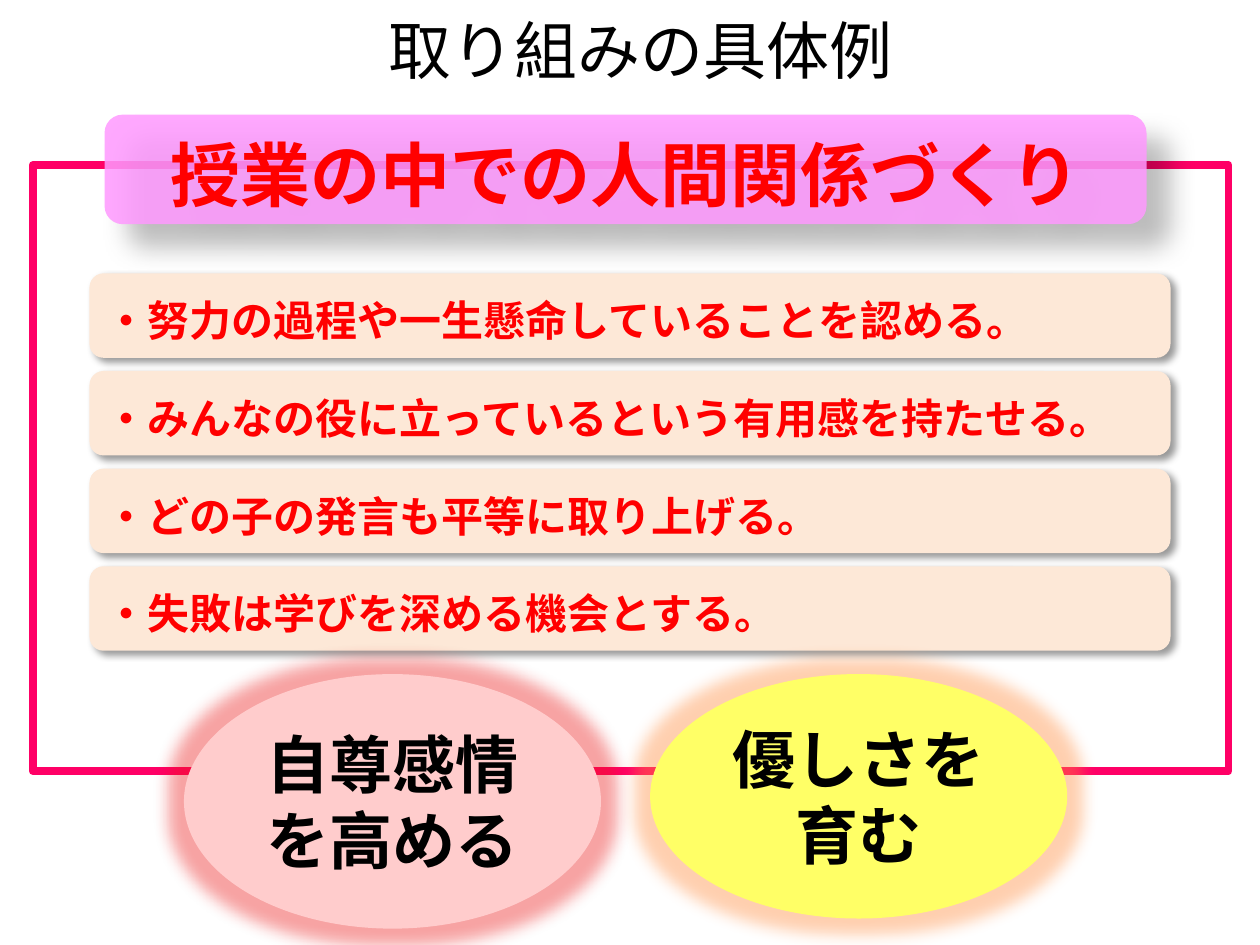
from lxml import etree
from pptx import Presentation
from pptx.dml.color import RGBColor
from pptx.enum.shapes import MSO_SHAPE
from pptx.enum.text import MSO_ANCHOR, PP_ALIGN
from pptx.oxml.ns import qn
from pptx.util import Inches, Pt

RECT, ROUNDED, OVAL = MSO_SHAPE.RECTANGLE, MSO_SHAPE.ROUNDED_RECTANGLE, MSO_SHAPE.OVAL
LEFT, CENTER, MIDDLE = PP_ALIGN.LEFT, PP_ALIGN.CENTER, MSO_ANCHOR.MIDDLE

# Content
TITLE = "取り組みの具体例"
BANNER = "授業の中での人間関係づくり"
PRACTICES = [
    "・努力の過程や一生懸命していることを認める。",
    "・みんなの役に立っているという有用感を持たせる。",
    "・どの子の発言も平等に取り上げる。",
    "・失敗は学びを深める機会とする。",
]
# text, left, height, fill, glow
GOALS = [
    ("自尊感情を高める", 1.46, 2.02, "pink", "red_glow"),
    ("優しさを育む", 5.16, 1.94, "yellow", "orange_glow"),
]
COLORS = {
    "frame": "FF0066", "banner": "FF99FF", "practice": "FDE8D7",
    "pink": "FFCCCC", "yellow": "FFFF66", "red": "FF0000",
    "black": "000000", "white": "FFFFFF",
    "red_glow": "EB1919", "orange_glow": "FF8939",
}
JAPANESE = "Noto Sans CJK JP"
PRACTICE_TOP, PRACTICE_STEP = 2.17, 0.775
ROUNDED_MARGINS = (0.1, 0.12, 0.1, 0.05)


def rgb(color):
    return RGBColor.from_string(COLORS[color])


def add_color(parent, color, alpha=100):
    node = etree.SubElement(parent, qn("a:srgbClr"), val=COLORS[color])
    if alpha < 100:
        etree.SubElement(node, qn("a:alpha"), val=str(alpha * 1000))


def write(shape, text, size, color="black", font=JAPANESE, bold=True,
          align=CENTER, margins=(0.1, 0.05, 0.1, 0.05), outline=None):
    frame = shape.text_frame
    frame.word_wrap = True
    frame.vertical_anchor = MIDDLE
    (frame.margin_left, frame.margin_top,
     frame.margin_right, frame.margin_bottom) = map(Inches, margins)
    paragraph = frame.paragraphs[0]
    paragraph.alignment = align
    run = paragraph.add_run()
    run.text = text
    run.font.size, run.font.bold, run.font.name = Pt(size), bold, font
    run.font.color.rgb = rgb(color)
    properties = run.font._element
    latin = properties.find(qn("a:latin"))
    latin.addnext(etree.Element(qn("a:ea"), typeface=font))
    if outline:
        line = etree.Element(qn("a:ln"), width_attribute(0.75))
        add_color(etree.SubElement(line, qn("a:solidFill")), outline)
        properties.insert(0, line)


def width_attribute(points):
    return {"w": str(Pt(points))}


def add_box(kind, left, top, width, height, fill=None, alpha=100):
    box = slide.shapes.add_shape(kind, *map(Inches, (left, top, width, height)))
    box.shadow.inherit = False
    box.line.fill.background()
    if fill:
        box.fill.solid()
        box.fill.fore_color.rgb = rgb(fill)
        if alpha < 100:
            node = box._element.spPr.find(qn("a:solidFill"))[0]
            etree.SubElement(node, qn("a:alpha"), val=str(alpha * 1000))
    else:
        box.fill.background()
    return box


def add_effect(box, tag, color, alpha, **attributes):
    effects = box._element.spPr.find(qn("a:effectLst"))
    effect = etree.SubElement(
        effects, qn(tag), {key: str(value) for key, value in attributes.items()})
    add_color(effect, color, alpha)


def add_shadow(box, alpha, blur, distance):
    add_effect(box, "a:outerShdw", "black", alpha, blurRad=Pt(blur),
               dist=Pt(distance), dir=45 * 60000, algn="tl", rotWithShape=0)


prs = Presentation()
prs.slide_width, prs.slide_height = Inches(10), Inches(7.5)
slide = prs.slides.add_slide(prs.slide_layouts[5])

# Title
title = slide.shapes.title
title.left, title.top, title.width, title.height = map(
    Inches, (0.83, -0.03, 8.5, 0.84))
write(title, TITLE, 36, font="Calibri", bold=False)

# Frame
frame_box = add_box(RECT, 0.26, 1.31, 9.49, 4.81)
frame_box.line.color.rgb = rgb("frame")
frame_box.line.width = Pt(4.5)

# Banner
banner = add_box(ROUNDED, 0.83, 0.91, 8.27, 0.87, "banner", alpha=85)
add_shadow(banner, 30, 15, 18)
write(banner, BANNER, 40, color="red", margins=ROUNDED_MARGINS, outline="white")

# Practices
for row, practice in enumerate(PRACTICES):
    bar = add_box(ROUNDED, 0.71, PRACTICE_TOP + row * PRACTICE_STEP,
                  8.58, 0.67, "practice")
    add_shadow(bar, 40, 4, 3)
    write(bar, practice, 24, color="red", align=LEFT, margins=ROUNDED_MARGINS)

# Goals
for goal, left, height, fill, glow in GOALS:
    oval = add_box(OVAL, left, 5.35, 3.31, height, fill)
    add_effect(oval, "a:glow", glow, 40, rad=Pt(18))
    write(oval, goal, 36)

prs.save("out.pptx")
